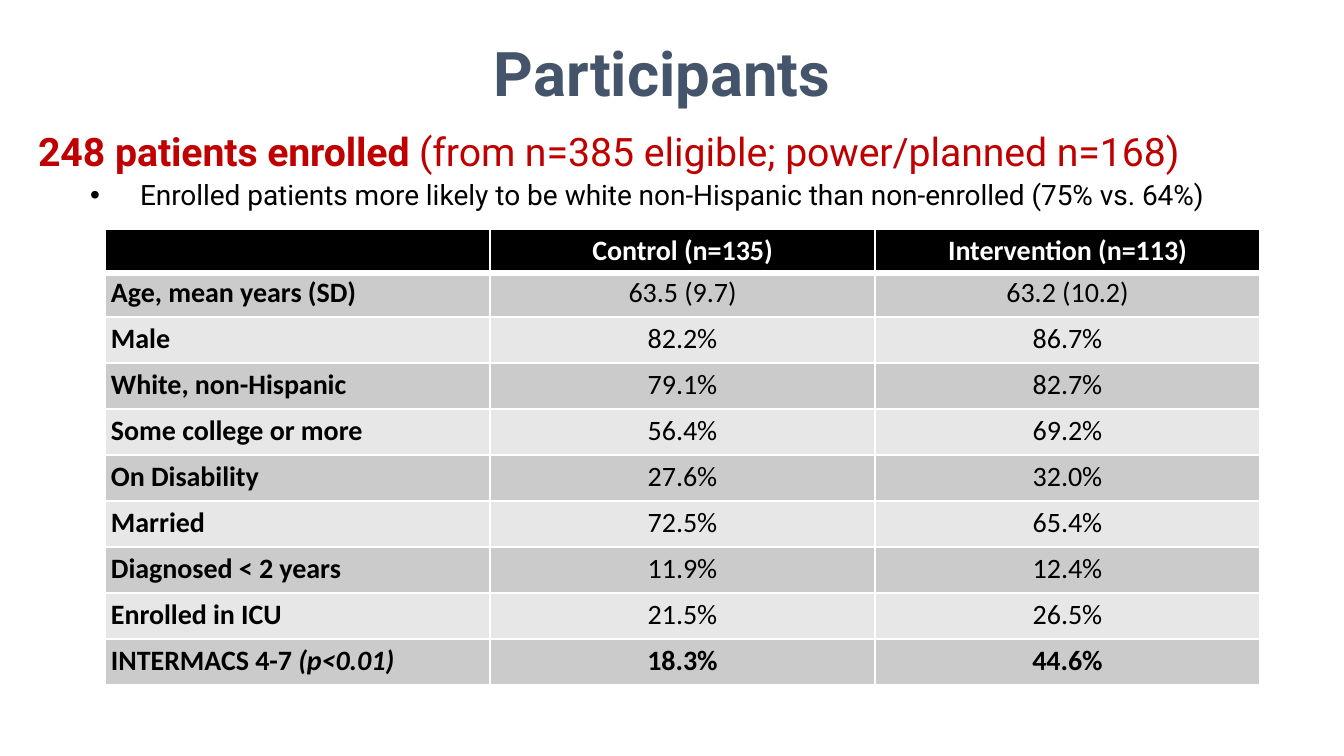
"""Build the Participants slide: title, enrolment summary and baseline table."""
from lxml.etree import SubElement
from pptx import Presentation
from pptx.dml.color import RGBColor as RGB
from pptx.enum.text import MSO_ANCHOR as ANCHOR, PP_ALIGN as ALIGN
from pptx.oxml.ns import qn
from pptx.util import Inches, Pt

SCALE = Inches(1) / 100.8
THEME = {
    "heading": "Roboto", "body": "Calibri",
    "title": "44546A", "accent": "C00000", "ink": "000000", "paper": "FFFFFF",
    "bands": ("CBCBCB", "E7E7E7"),
    "title_size": 44, "lead_size": 28, "text_size": 20,
}


def px(n):
    return round(n * SCALE)


def write(p, runs, font, size, color, before, align=ALIGN.LEFT):
    p.alignment, p.space_before = align, Pt(before)
    for text, style in runs:
        r = p.add_run()
        r.text = text
        fmt = {"name": font, "size": Pt(size), "bold": "b" in style, "italic": "i" in style}
        for key, value in fmt.items():
            setattr(r.font, key, value)
        r.font.color.rgb = RGB.from_string(color)
        r.font._element.set("spc", "-5" if "t" in style else "0")


prs = Presentation()
prs.slide_width, prs.slide_height = px(1344), px(756)
s = prs.slides.add_slide(prs.slide_layouts[5])

title = s.shapes.title
summary = s.shapes.add_textbox(0, 0, 0, 0)
frames = ((title, (494, 34, 356, 77), 1), (summary, (38, 120, 1184, 93), 7))
for sp, box, inset in frames:
    sp.left, sp.top, sp.width, sp.height = map(px, box)
    fmt = {"margin_left": 0, "margin_right": 0, "margin_bottom": 0, "margin_top": px(inset),
           "word_wrap": True, "vertical_anchor": ANCHOR.TOP}
    for key, value in fmt.items():
        setattr(sp.text_frame, key, value)

write(title.text_frame.paragraphs[0], [("Participants", "bt")],
      THEME["heading"], THEME["title_size"], THEME["title"], 1)
tf = summary.text_frame
write(tf.paragraphs[0],
      [("248 ", "b"), ("patients enrolled ", "bt"), ("(from ", "t"), ("n=385 eligible; ", ""),
       ("power/planned ", "t"), ("n=168)", "")],
      THEME["heading"], THEME["lead_size"], THEME["accent"], 4.8)
p = tf.add_paragraph()
write(p,
      [("Enrolled patients more ", "t"), ("likely ", ""), ("to ", "t"), ("be ", ""),
       ("white non-Hispanic than non-enrolled (75% vs. 64%)", "t")],
      THEME["heading"], THEME["text_size"], THEME["ink"], 2.6)
pPr = p._p.get_or_add_pPr()
pPr.set("marL", str(px(102)))
pPr.set("indent", str(px(-50)))
SubElement(pPr, qn("a:buFont"), typeface="Arial")
SubElement(pPr, qn("a:buChar"), char="•")

ROWS = [
    ("", "Control (n=135)", "Intervention (n=113)"),
    ("Age, mean years (SD)", "63.5 (9.7)", "63.2 (10.2)"),
    ("Male", "82.2%", "86.7%"),
    ("White, non-Hispanic", "79.1%", "82.7%"),
    ("Some college or more", "56.4%", "69.2%"),
    ("On Disability", "27.6%", "32.0%"),
    ("Married", "72.5%", "65.4%"),
    ("Diagnosed < 2 years", "11.9%", "12.4%"),
    ("Enrolled in ICU", "21.5%", "26.5%"),
    ("INTERMACS 4-7 ", "18.3%", "44.6%"),
]
LAST = len(ROWS) - 1
heights = [44, 44] + [46] * (len(ROWS) - 2)
table = s.shapes.add_table(len(ROWS), 3, px(105), px(229), px(1155), px(sum(heights))).table
table.horz_banding = False
for col in table.columns:
    col.width = px(385)

for i, (row, height) in enumerate(zip(ROWS, heights)):
    table.rows[i].height = px(height)
    fill = THEME["bands"][(i - 1) % 2] if i else THEME["ink"]
    color = THEME["ink"] if i else THEME["paper"]
    for j, text in enumerate(row):
        cell = table.cell(i, j)
        fmt = {"margin_left": 0, "margin_right": 0, "margin_bottom": 0,
               "margin_top": px(3 if i == 1 else 5), "vertical_anchor": ANCHOR.TOP}
        for key, value in fmt.items():
            setattr(cell, key, value)
        tcPr = cell._tc.get_or_add_tcPr()
        for side in "LRTB":
            heavy = (i, side) in ((0, "B"), (1, "T"))
            ln = SubElement(tcPr, qn(f"a:ln{side}"), w=str(Pt(4.25 if heavy else 1.5)))
            SubElement(SubElement(ln, qn("a:solidFill")), qn("a:srgbClr"), val=THEME["paper"])
        cell.fill.solid()
        cell.fill.fore_color.rgb = RGB.from_string(fill)
        if not text:
            continue
        p = cell.text_frame.paragraphs[0]
        runs = [(text, "bt" if j == 0 or i in (0, LAST) else "t")]
        if (i, j) == (LAST, 0):
            runs.append(("(p<0.01)", "bit"))
        write(p, runs, THEME["body"], THEME["text_size"], color, 2 if i == 1 else 3.5,
              ALIGN.CENTER if j else ALIGN.LEFT)
        if j == 0:
            p._p.get_or_add_pPr().set("marL", str(px(6)))

prs.save("out.pptx")
